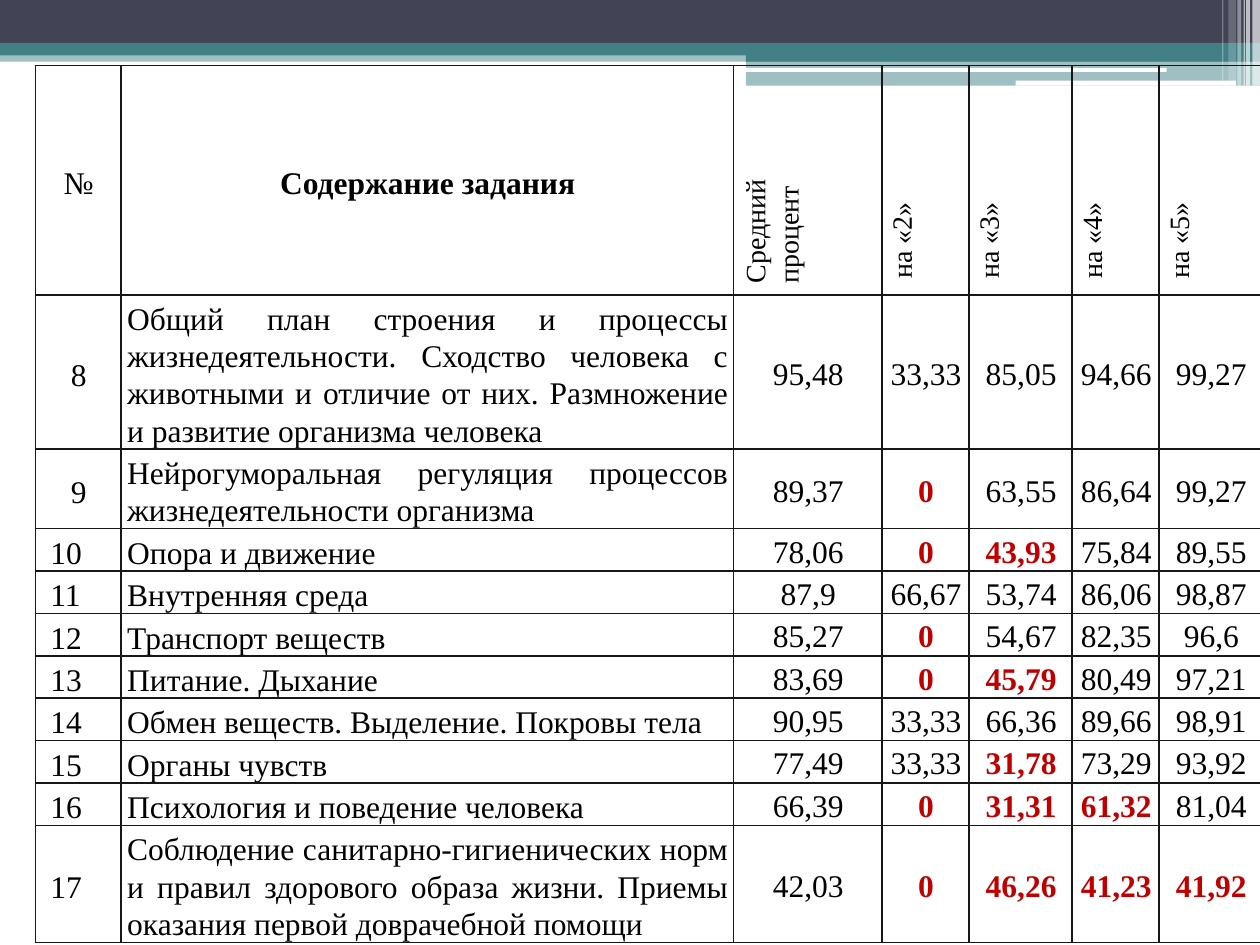
from lxml import etree
from pptx import Presentation
from pptx.dml.color import RGBColor
from pptx.enum import shapes, text
from pptx.oxml.ns import qn
from pptx.util import Inches, Pt

FONT = "Times New Roman"
BLACK, RED, BORDER = "000000", "C00000", "181717"
TEAL, SLATE, WHITE = "438086", "424456", "FFFFFF"

BANDS = [
    (0, 0.4, 10, 0.09, TEAL, 50),
    (0, 0, 10, 0.34, SLATE, 100),
    (0, 0.34, 10, 0.1, TEAL, 100),
    (5.92, 0.39, 4.08, 0.1, TEAL, 100),
    (5.92, 0.48, 4.08, 0.2, TEAL, 50),
]
ROUNDED_LINES = [(5.91, 0.54, 3.35, 0.03), (8.06, 0.64, 1.75, 0.04)]
STRIPES = [
    (9.94, 0.06, 0.68, 65),
    (9.89, 0.03, 0.68, 65),
    (9.87, 0.01, 0.68, 60),
    (9.82, 0.03, 0.68, 40),
    (9.75, 0.06, 0.64, 20),
    (9.7, 0.01, 0.64, 30),
]

COLUMN_WIDTHS = [0.68, 4.86, 1.18, 0.69, 0.82, 0.69, 0.82]
ROW_HEIGHTS = [1.82, 1.22, 0.63] + [0.33] * 7 + [0.93]
HEADINGS = ["№", "Содержание задания", "Средний процент",
            "на «2»", "на «3»", "на «4»", "на «5»"]
TASKS = [
    ("8", "Общий план строения и процессы жизнедеятельности. Сходство человека "
     "с животными и отличие от них. Размножение и развитие организма человека",
     "95,48 33,33 85,05 94,66 99,27"),
    ("9", "Нейрогуморальная регуляция процессов жизнедеятельности организма",
     "89,37 0 63,55 86,64 99,27"),
    ("10", "Опора и движение", "78,06 0 43,93 75,84 89,55"),
    ("11", "Внутренняя среда", "87,9 66,67 53,74 86,06 98,87"),
    ("12", "Транспорт веществ", "85,27 0 54,67 82,35 96,6"),
    ("13", "Питание. Дыхание", "83,69 0 45,79 80,49 97,21"),
    ("14", "Обмен веществ. Выделение. Покровы тела",
     "90,95 33,33 66,36 89,66 98,91"),
    ("15", "Органы чувств", "77,49 33,33 31,78 73,29 93,92"),
    ("16", "Психология и поведение человека", "66,39 0 31,31 61,32 81,04"),
    ("17", "Соблюдение санитарно-гигиенических норм и правил здорового образа "
     "жизни. Приемы оказания первой доврачебной помощи",
     "42,03 0 46,26 41,23 41,92"),
]
LOW_RESULTS = {"0", "43,93", "45,79", "31,78", "31,31", "61,32",
               "46,26", "41,23", "41,92"}


def rgb(value):
    """Turn a hex string into a colour."""
    return RGBColor.from_string(value)


def add_bar(slide, left, top, width, height, color, opacity=100,
            kind=shapes.MSO_SHAPE.RECTANGLE):
    """Add one plain bar of the page decoration."""
    bar = slide.shapes.add_shape(
        kind, Inches(left), Inches(top), Inches(width), Inches(height))
    bar.shadow.inherit = False
    bar.fill.solid()
    bar.fill.fore_color.rgb = rgb(color)
    bar.line.fill.background()
    if opacity < 100:
        tint = bar.fill._xPr.find(".//" + qn("a:srgbClr"))
        etree.SubElement(tint, qn("a:alpha"), val=str(opacity * 1000))
    return bar


def add_decoration(slide):
    """Draw the coloured bands and stripes across the top."""
    for band in BANDS:
        add_bar(slide, *band)
    for line in ROUNDED_LINES:
        add_bar(slide, *line, WHITE, kind=shapes.MSO_SHAPE.ROUNDED_RECTANGLE)
    for left, width, height, opacity in STRIPES:
        add_bar(slide, left, 0, width, height, WHITE, opacity)


def set_borders(cell):
    """Give a cell thin dark borders and no fill."""
    cell.fill.background()
    properties = cell._tc.get_or_add_tcPr()
    for position, side in enumerate(("lnL", "lnR", "lnT", "lnB")):
        border = etree.Element(qn("a:" + side), w=str(Pt(1)))
        fill = etree.SubElement(border, qn("a:solidFill"))
        etree.SubElement(fill, qn("a:srgbClr"), val=BORDER)
        properties.insert(position, border)


def fill_cell(cell, words, align=text.PP_ALIGN.CENTER, middle=True, size=18,
              bold=False, color=BLACK, indent=0, spacing=None):
    """Write and format the text of one cell."""
    set_borders(cell)
    cell.margin_left, cell.margin_right = Inches(0.05), Inches(0.04)
    cell.margin_top, cell.margin_bottom = Inches(0.04), 0
    cell.vertical_anchor = text.MSO_ANCHOR.MIDDLE if middle else text.MSO_ANCHOR.TOP
    paragraph = cell.text_frame.paragraphs[0]
    paragraph.text = words
    paragraph.alignment = align
    if spacing:
        paragraph.line_spacing = spacing
    if indent:
        paragraph._p.get_or_add_pPr().set("marL", str(Inches(indent)))
    font = paragraph.runs[0].font
    font.name, font.size, font.bold = FONT, Pt(size), bold
    font.color.rgb = rgb(color)


def fill_headings(table):
    """Fill the heading row, with the result headings turned upwards."""
    for column, heading in enumerate(HEADINGS):
        cell = table.cell(0, column)
        if column < 2:
            fill_cell(cell, heading, bold=column == 1, spacing=1.07)
            continue
        average = column == 2
        fill_cell(cell, heading, text.PP_ALIGN.LEFT, False, 16,
                  indent=0.04 if average else 0.08,
                  spacing=1.07 if average else None)
        cell.margin_right = Inches(0.2)
        cell._tc.get_or_add_tcPr().set("vert", "vert270")


def fill_task(table, row, number, content, results):
    """Fill one task row, marking low results in bold red."""
    if len(number) == 1:
        fill_cell(table.cell(row, 0), number, spacing=1.07)
    else:
        fill_cell(table.cell(row, 0), number, text.PP_ALIGN.LEFT,
                  middle=number == "17", indent=0.07, spacing=1.07)
    fill_cell(table.cell(row, 1), content, text.PP_ALIGN.JUSTIFY, False,
              spacing=1.07)
    for column, result in enumerate(results.split(), 2):
        low = result in LOW_RESULTS
        fill_cell(table.cell(row, column), result, bold=low,
                  color=RED if low else BLACK)


def add_results_table(slide):
    """Add the table of task results."""
    table = slide.shapes.add_table(
        len(ROW_HEIGHTS), len(COLUMN_WIDTHS), Inches(0.28), Inches(0.52),
        Inches(sum(COLUMN_WIDTHS)), Inches(sum(ROW_HEIGHTS))).table
    table.first_row = table.horz_banding = False
    for column, width in zip(table.columns, COLUMN_WIDTHS):
        column.width = Inches(width)
    for row, height in zip(table.rows, ROW_HEIGHTS):
        row.height = Inches(height)
    fill_headings(table)
    for row, task in enumerate(TASKS, 1):
        fill_task(table, row, *task)


def main():
    """Build the slide and save it."""
    deck = Presentation()
    deck.slide_width, deck.slide_height = Inches(10), Inches(7.5)
    slide = deck.slides.add_slide(deck.slide_layouts[6])
    add_decoration(slide)
    add_results_table(slide)
    deck.save("out.pptx")


if __name__ == "__main__":
    main()
